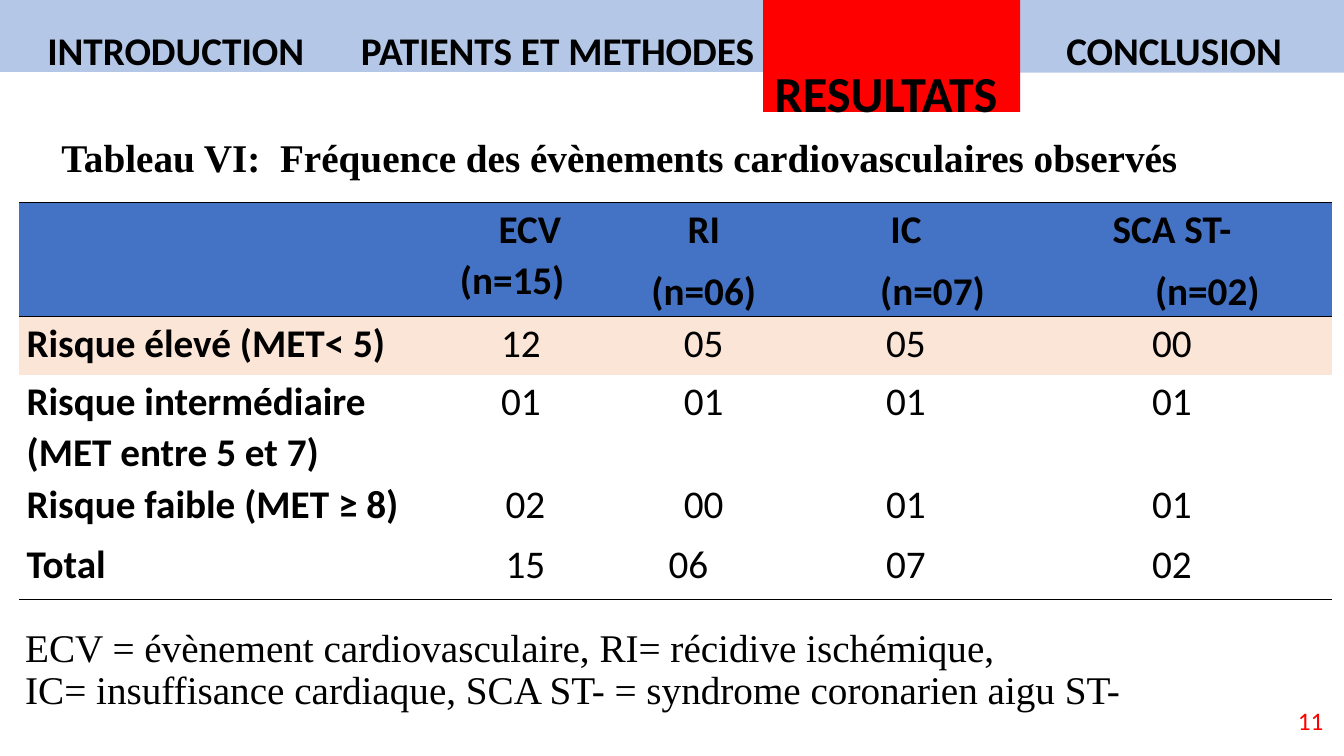
from dataclasses import dataclass

import lxml.etree
import pptx
import pptx.dml.color
import pptx.enum.shapes
import pptx.enum.text
import pptx.util
from pptx.oxml.ns import qn

Cm = pptx.util.Cm
Pt = pptx.util.Pt
ALIGN = pptx.enum.text.PP_ALIGN
ANCHOR = pptx.enum.text.MSO_ANCHOR


@dataclass(frozen=True)
class Theme:
    black: str = "000000"
    red: str = "FF0000"
    tab: str = "B4C7E7"
    header: str = "4472C4"
    highlight: str = "FBE5D6"
    sans: str = "Calibri"
    serif: str = "Times New Roman"
    small: int = 18
    body: int = 28
    large: int = 36


@dataclass(frozen=True)
class Tab:
    text: str
    left: float
    top: float
    width: float
    height: float
    fill: str
    size: int
    spacing: float


@dataclass(frozen=True)
class Line:
    text: str
    indent: float = 0
    align: ALIGN = ALIGN.CENTER
    bold: bool = False


THEME = Theme()
TABS = [
    Tab("PATIENTS ET METHODES", 8.69, -0.05, 10.72, 1.86, THEME.tab, THEME.body, 1.5),
    Tab("CONCLUSION", 25.3, -0.05, 8.58, 1.88, THEME.tab, THEME.body, 1.5),
    Tab("INTRODUCTION", 0, -0.05, 8.86, 1.86, THEME.tab, THEME.body, 1.5),
    Tab("RESULTATS ", 19.23, -0.08, 6.48, 2.9, THEME.red, THEME.large, 2),
]


def head(text: str, indent: float = 0) -> Line:
    return Line(text, indent, bold=True)


def label(text: str) -> list[Line]:
    return [Line(text, align=ALIGN.LEFT, bold=True)]


def values(*texts: str, indent: float) -> list[list[Line]]:
    """Centred figures, the first one shifted by its indent."""
    return [[Line(t, 0 if i else indent)] for i, t in enumerate(texts)]


COLUMN_WIDTHS = [10.01, 4.83, 4.83, 5.36, 8.05]
ROW_HEIGHTS = [2.87, 1.47, 2.57, 1.52, 1.55]
ROW_FILLS = [THEME.header, THEME.highlight, None, None, None]
RULED_EDGES = {0, 1, len(ROW_HEIGHTS)}
ROWS = [
    [[], [head("ECV (n=15)", 0.89)], [head("RI"), head("(n=06)")],
     [head("IC"), head("(n=07)", 1.34)], [head("SCA ST-"), head("(n=02)", 1.78)]],
    [label("Risque élevé (MET< 5)"), *values("12", "05", "05", "00", indent=0.45)],
    [label("Risque intermédiaire (MET entre 5 et 7)"),
     *values("01", "01", "01", "01", indent=0.45)],
    [label("Risque faible (MET ≥ 8)"), *values("02", "00", "01", "01", indent=0.67)],
    [label("Total"), [Line("15", 0.67)], [Line("06", 1.34, ALIGN.LEFT)],
     [Line("07")], [Line("02")]],
]


def rgb(color: str) -> pptx.dml.color.RGBColor:
    return pptx.dml.color.RGBColor.from_string(color)


def write(p, text: str, *, size: int = THEME.body, font: str = THEME.sans,
          color: str = THEME.black, bold: bool = False, align: ALIGN = ALIGN.LEFT,
          spacing: float = 1, after: float = 0, indent: float = 0) -> None:
    p.alignment = align
    p.line_spacing = spacing
    p.space_before = Pt(0)
    p.space_after = Pt(after)
    if indent:
        p._p.get_or_add_pPr().set("indent", str(Cm(indent)))
    for i, part in enumerate(text.split("\n")):
        if i:
            p.add_line_break()
        r = p.add_run()
        r.text = part
        r.font.size = Pt(size)
        r.font.name = font
        r.font.bold = bold
        r.font.color.rgb = rgb(color)


def place(sp, left: float, top: float, width: float, height: float) -> None:
    sp.left, sp.top, sp.width, sp.height = map(Cm, (left, top, width, height))


def add_text(s, box: tuple[float, float, float, float], text: str,
             anchor: ANCHOR = ANCHOR.TOP, **style) -> None:
    tf = s.shapes.add_textbox(*map(Cm, box)).text_frame
    tf.word_wrap = True
    tf.vertical_anchor = anchor
    write(tf.paragraphs[0], text, **style)


def add_tab(s, tab: Tab) -> None:
    sp = s.shapes.add_shape(pptx.enum.shapes.MSO_SHAPE.RECTANGLE,
                            Cm(tab.left), Cm(tab.top), Cm(tab.width), Cm(tab.height))
    sp.shadow.inherit = False
    sp.fill.solid()
    sp.fill.fore_color.rgb = rgb(tab.fill)
    sp.line.fill.background()
    tf = sp.text_frame
    tf.word_wrap = True
    tf.vertical_anchor = ANCHOR.TOP
    write(tf.paragraphs[0], tab.text, size=tab.size, bold=True,
          align=ALIGN.CENTER, spacing=tab.spacing)


def set_borders(cell, top: bool, bottom: bool) -> None:
    tc_pr = cell._tc.get_or_add_tcPr()
    edges = {"a:lnL": False, "a:lnR": False, "a:lnT": top, "a:lnB": bottom}
    for i, (tag, ruled) in enumerate(edges.items()):
        ln = lxml.etree.Element(qn(tag), w=str(Pt(1)))
        fill = lxml.etree.SubElement(ln, qn("a:solidFill" if ruled else "a:noFill"))
        if ruled:
            lxml.etree.SubElement(fill, qn("a:srgbClr"), val=THEME.black)
        tc_pr.insert(i, ln)


def fill_cell(cell, lines: list[Line], fill: str | None) -> None:
    cell.margin_left = cell.margin_right = Cm(0.19)
    cell.margin_top = cell.margin_bottom = 0
    if fill:
        cell.fill.solid()
        cell.fill.fore_color.rgb = rgb(fill)
    else:
        cell.fill.background()
    tf = cell.text_frame
    for i, line in enumerate(lines):
        p = tf.add_paragraph() if i else tf.paragraphs[0]
        write(p, line.text, bold=line.bold, align=line.align,
              spacing=1.07, after=8, indent=line.indent)


def add_events_table(s) -> None:
    table = s.shapes.add_table(len(ROWS), len(COLUMN_WIDTHS), Cm(0.48), Cm(5.11),
                               Cm(sum(COLUMN_WIDTHS)), Cm(sum(ROW_HEIGHTS))).table
    table.first_row = table.horz_banding = False
    for column, width in zip(table.columns, COLUMN_WIDTHS):
        column.width = Cm(width)
    for i, (row, height) in enumerate(zip(table.rows, ROW_HEIGHTS)):
        row.height = Cm(height)
        for cell, lines in zip(row.cells, ROWS[i]):
            fill_cell(cell, lines, ROW_FILLS[i])
            set_borders(cell, i in RULED_EDGES, i + 1 in RULED_EDGES)


def main() -> None:
    prs = pptx.Presentation()
    prs.slide_width, prs.slide_height = Cm(33.87), Cm(19.05)
    s = prs.slides.add_slide(prs.slide_layouts.get_by_name("Title Only"))

    title = s.shapes.title
    place(title, 0.38, 15.06, 34.32, 3.68)
    tf = title.text_frame
    tf.auto_size = pptx.enum.text.MSO_AUTO_SIZE.NONE
    tf.vertical_anchor = ANCHOR.MIDDLE
    write(tf.paragraphs[0],
          "ECV = évènement cardiovasculaire, RI= récidive ischémique, \n"
          "IC= insuffisance cardiaque, SCA ST- = syndrome coronarien aigu ST-",
          font=THEME.serif, spacing=0.9)

    add_events_table(s)
    add_text(s, (31.8, 17.65, 1.8, 1.02), "11", ANCHOR.MIDDLE,
             size=THEME.small, color=THEME.red, align=ALIGN.RIGHT)
    add_text(s, (1.3, 3.23, 30.51, 1.45),
             "Tableau VI:  Fréquence des évènements cardiovasculaires observés",
             font=THEME.serif, bold=True)
    for tab in TABS:
        add_tab(s, tab)
    prs.save("out.pptx")


if __name__ == "__main__":
    main()
